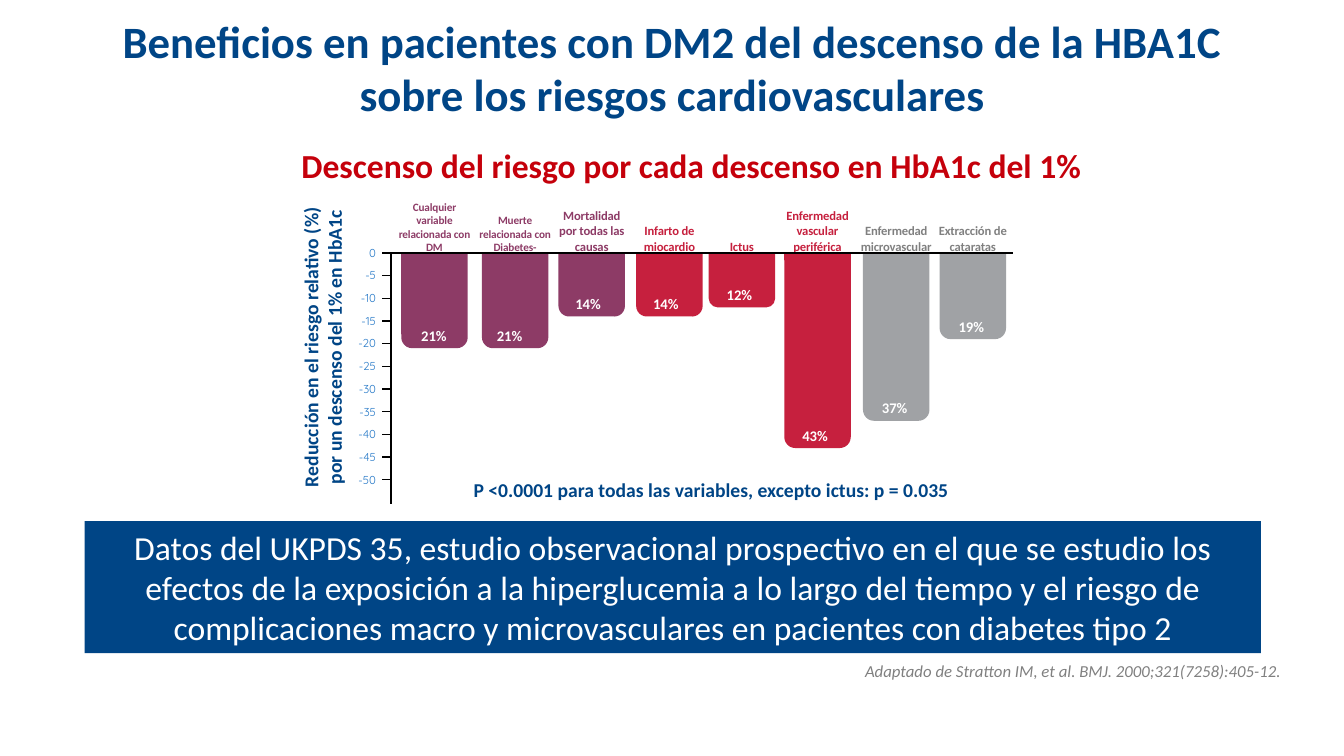
from lxml import etree
from pptx import Presentation
from pptx.dml.color import RGBColor
from pptx.enum.shapes import MSO_CONNECTOR, MSO_SHAPE
from pptx.enum.text import MSO_ANCHOR, PP_ALIGN
from pptx.oxml.ns import qn
from pptx.util import Pt

LEFT, CENTER, RIGHT = PP_ALIGN.LEFT, PP_ALIGN.CENTER, PP_ALIGN.RIGHT
TOP, MIDDLE, BOTTOM = MSO_ANCHOR.TOP, MSO_ANCHOR.MIDDLE, MSO_ANCHOR.BOTTOM
STRAIGHT = MSO_CONNECTOR.STRAIGHT
RECTANGLE, ROUNDED_BAR = MSO_SHAPE.RECTANGLE, MSO_SHAPE.ROUND_2_SAME_RECTANGLE

COLORS = {
    "blue": "004586", "red": "C5000B", "axis": "287AC8", "black": "000000",
    "white": "FFFFFF", "source": "808080", "plum": "8D3B66",
    "crimson": "C6203E", "grey": "A0A2A5",
}
FORMATS = {
    "title": {"name": "Calibri", "size": Pt(32), "bold": True},
    "heading": {"name": "Calibri", "size": Pt(24), "bold": True},
    "banner": {"name": "Calibri", "size": Pt(24)},
    "note": {"name": "Calibri", "size": Pt(14), "bold": True},
    "source": {"name": "Calibri", "size": Pt(12), "italic": True},
    "tick": {"name": "Quicksand", "size": Pt(8.2)},
    "value": {"name": "Calibri", "size": Pt(10.5), "bold": True},
    "category": {"name": "Calibri", "size": Pt(9), "bold": True},
    "small category": {"name": "Calibri", "size": Pt(8), "bold": True},
}
BARS = [
    ("Cualquier variable relacionada con DM", 21, 7.2, 7.2, 57, "plum", "plum", "small category"),
    ("Muerte relacionada con Diabetes-", 21, 64.8, 3.6, 58, "plum", "plum", "small category"),
    ("Mortalidad por todas las causas", 14, 119.5, 5, 51, "plum", "plum", "category"),
    ("Infarto de miocardio", 14, 175, 5, 69, "crimson", "crimson", "category"),
    ("Ictus", 12, 226.8, 5.8, 69, "crimson", "crimson", "category"),
    ("Enfermedad vascular\nperiférica", 43, 280.8, 5.8, 69, "crimson", "crimson", "category"),
    ("Enfermedad microvascular", 37, 337, 6.5, 69, "grey", "source", "category"),
    ("Extracción de cataratas", 19, 391.7, 6.5, 69, "grey", "source", "category"),
]
POINTS_PER_PERCENT = 3.24
BAR_WIDTH = 47.5


def write(shape, text, style, color, align=LEFT, anchor=TOP, wrap=True, inset=None, spacing=None):
    """Put formatted text into a shape."""
    frame = shape.text_frame
    frame.text = text
    frame.word_wrap = wrap
    frame.vertical_anchor = anchor
    if inset is not None:
        for side in ("left", "top", "right", "bottom"):
            setattr(frame, f"margin_{side}", Pt(inset))
    for paragraph in frame.paragraphs:
        paragraph.alignment = align
        for run in paragraph.runs:
            for attribute, value in FORMATS[style].items():
                setattr(run.font, attribute, value)
            run.font.color.rgb = RGBColor.from_string(COLORS[color])
            if spacing is not None:
                run._r.get_or_add_rPr().set("spc", str(spacing))


def add_text(slide, box, text, style, color, **options):
    """Add a text box at the given box and return it."""
    shape = slide.shapes.add_textbox(*(Pt(length) for length in box))
    write(shape, text, style, color, **options)
    return shape


def add_block(slide, kind, box, color):
    """Add a filled preset shape without outline or shadow."""
    shape = slide.shapes.add_shape(kind, *(Pt(length) for length in box))
    shape.shadow.inherit = False
    shape.fill.solid()
    shape.fill.fore_color.rgb = RGBColor.from_string(COLORS[color])
    shape.line.fill.background()
    return shape


def add_line(slide, *ends):
    """Add a thin black line between two points."""
    line = slide.shapes.add_connector(STRAIGHT, *(Pt(length) for length in ends))
    line.line.color.rgb = RGBColor.from_string(COLORS["black"])
    line.line.width = Pt(1)
    etree.SubElement(line._element.spPr, qn("a:effectLst"))


def add_axis(slide, axis, zero):
    """Draw the value axis with its ticks and labels."""
    add_line(slide, axis, zero, axis, zero + 179.3)
    for percent in range(0, 51, 5):
        level = zero + percent * POINTS_PER_PERCENT
        add_line(slide, axis - 0.7, level, axis - 6.5, level)
        add_text(slide, (axis - 37.4, level - 5.1, 26.6, 10.1), str(-percent),
                 "tick", "axis", align=RIGHT, inset=0)


def add_bar(slide, axis, zero, bar):
    """Draw one hanging bar with its value and category."""
    category, percent, offset, value_offset, label_width, fill, ink, style = bar
    left = axis + offset
    height = percent * POINTS_PER_PERCENT
    shape = add_block(slide, ROUNDED_BAR, (left, zero, BAR_WIDTH, height), fill)
    shape.rotation = 180
    add_text(slide, (left + value_offset, zero + height - 19, 42, 20), f"{percent}%",
             "value", "white")
    label_left = left + (BAR_WIDTH - label_width) / 2
    add_text(slide, (label_left, zero - 39.5, label_width, 40), category, style, ink,
             align=CENTER, anchor=BOTTOM, inset=0, spacing=-10)


def add_risk_chart(slide, box):
    """Draw the risk reduction bars inside the box."""
    left, top, width, height = box
    axis, zero = left + 69.4, top + 40.7
    title_width, title_height = 227.5, 41
    title = add_text(slide, (left + 20.4 - title_width / 2, top + 108 - title_height / 2,
                             title_width, title_height),
                     "Reducción en el riesgo relativo (%)\vpor un descenso del 1% en HbA1c",
                     "note", "blue", align=CENTER)
    title.rotation = 270
    add_axis(slide, axis, zero)
    for bar in BARS:
        add_bar(slide, axis, zero, bar)
    add_line(slide, axis - 0.7, zero, left + width, zero)
    add_text(slide, (left + 121.2, top + height - 24.5, 356.4, 24.5),
             "P <0.0001 para todas las variables, excepto ictus: p = 0.035",
             "note", "blue", wrap=False)


def add_headings(slide, box):
    """Place the slide title and the chart heading."""
    left, top, width, height = box
    add_text(slide, (left, top, width, 71.3),
             "Beneficios en pacientes con DM2 del descenso de la HBA1C "
             "sobre los riesgos cardiovasculares",
             "title", "blue", align=CENTER, anchor=MIDDLE)
    add_text(slide, (left + 160, top + height - 36, 576.7, 36),
             "Descenso del riesgo por cada descenso en HbA1c del 1%",
             "heading", "red", wrap=False)


def add_conclusion(slide, box):
    """Place the study banner and its source line."""
    left, top, width, height = box
    banner = add_block(slide, RECTANGLE, (left, top, width, 94.3), "blue")
    write(banner,
          "Datos del UKPDS 35, estudio observacional prospectivo en el que se estudio los "
          "efectos de la exposición a la hiperglucemia a lo largo del tiempo y el riesgo de "
          "complicaciones macro y microvasculares en pacientes con diabetes tipo 2",
          "banner", "white", align=CENTER, anchor=MIDDLE)
    add_text(slide, (left - 50.4, top + height - 23, 912.2, 23),
             "Adaptado de Stratton IM, et al. BMJ. 2000;321(7258):405-12.",
             "source", "source", align=RIGHT)


def main():
    """Build the slide and save it."""
    presentation = Presentation()
    presentation.slide_width, presentation.slide_height = Pt(960), Pt(540)
    slide = presentation.slides.add_slide(presentation.slide_layouts[6])
    add_headings(slide, (48.2, 12.2, 864, 123.8))
    add_risk_chart(slide, (210, 140, 513.6, 222.2))
    add_conclusion(slide, (60.5, 372.2, 840.2, 119.5))
    presentation.save("out.pptx")


if __name__ == "__main__":
    main()
